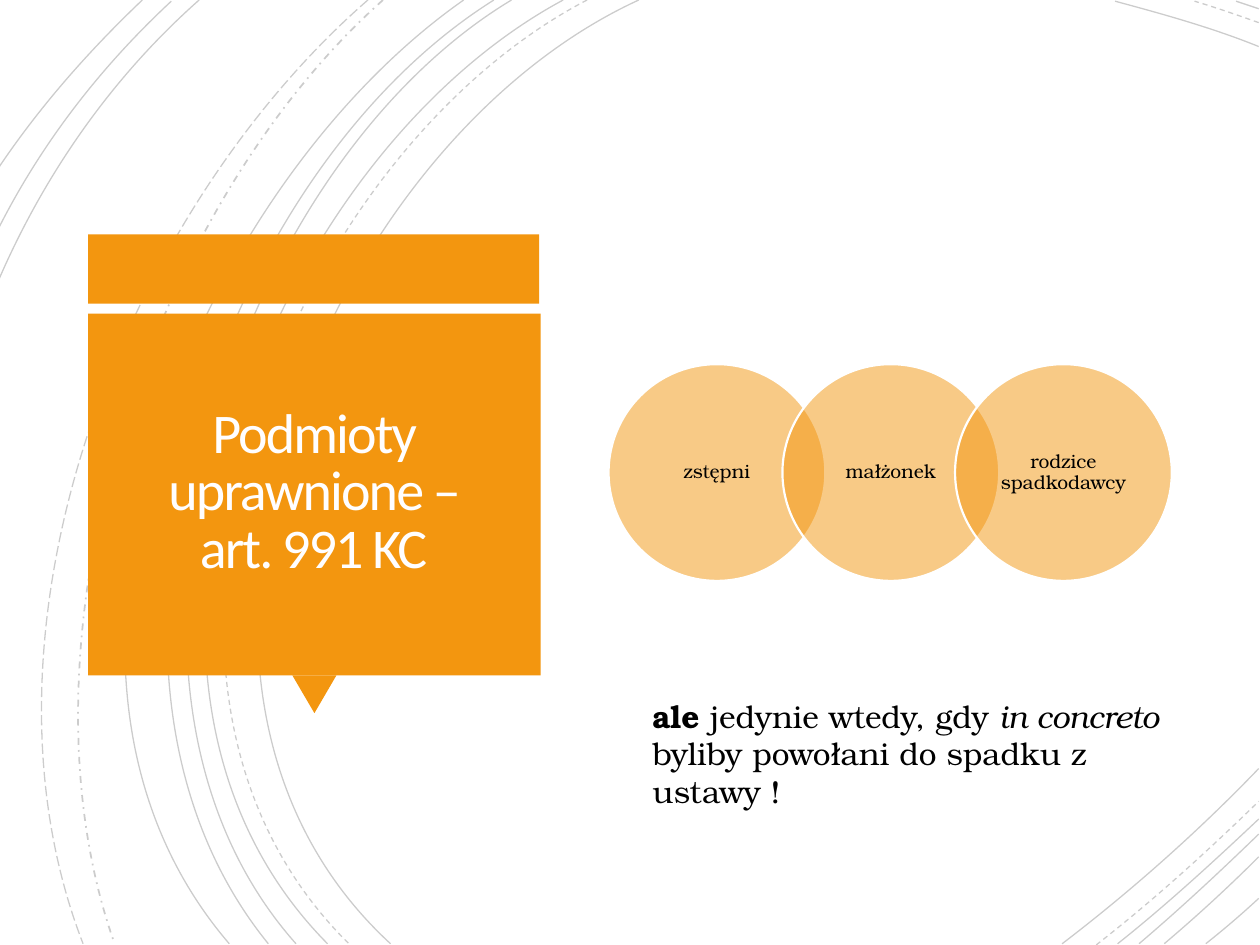
from lxml.etree import SubElement
from pptx import Presentation
from pptx.dml.color import RGBColor
from pptx.enum.dml import MSO_LINE
from pptx.enum.shapes import MSO_SHAPE
from pptx.enum.text import MSO_ANCHOR, PP_ALIGN
from pptx.oxml.ns import qn
from pptx.util import Pt

PX = 9144  # EMU per px, 100 px to the inch
COLORS = {"orange": "F3960F", "white": "FFFFFF", "title": "FFFEFF", "black": "000000"}
SERIF = "TeX Gyre Bonum"


def paint(fill, name, opacity=100):
    fill.solid()
    fill.fore_color.rgb = RGBColor.from_string(COLORS[name])
    if opacity < 100:
        color = fill._xPr.find(qn("a:solidFill")).find(qn("a:srgbClr"))
        SubElement(color, qn("a:alpha"), val=str(opacity * 1000))


def add_label(text, box, margins, spacing, font_name, size, color):
    label = slide.shapes.add_textbox(*[length * PX for length in box])
    text_frame = label.text_frame
    text_frame.word_wrap = True
    text_frame.vertical_anchor = MSO_ANCHOR.MIDDLE
    text_frame.margin_left = text_frame.margin_right = margins[0] * PX
    text_frame.margin_top = text_frame.margin_bottom = margins[1] * PX
    text_frame.text = text
    paragraph = text_frame.paragraphs[0]
    paragraph.alignment = PP_ALIGN.CENTER
    paragraph.line_spacing = spacing
    font = paragraph.runs[0].font
    font.name, font.size = font_name, Pt(size)
    paint(font.fill, color)
    return font


presentation = Presentation()
presentation.slide_width, presentation.slide_height = 1000 * PX, 750 * PX
slide = presentation.slides.add_slide(presentation.slide_layouts[6])

# Background arcs: start, two control points and end
solid, dash = (MSO_LINE.SOLID, 0.75), (MSO_LINE.DASH, 0.75)
dash_dot, long_dash = (MSO_LINE.DASH_DOT, 1), (MSO_LINE.LONG_DASH, 0.75)
arcs = [
    (solid, [(507, 0), (256, 115), (83, 540), (310, 749)]),
    (solid, [(999, 37), (962, 22), (922, 11), (885, 1)]),
    (solid, [(843, 749), (898, 707), (951, 660), (999, 610)]),
    (dash, [(466, 0), (226, 125), (63, 538), (277, 749)]),
    (dash, [(999, 18), (982, 12), (965, 6), (948, 1)]),
    (dash, [(870, 750), (915, 715), (958, 676), (999, 636)]),
    (solid, [(447, 0), (211, 127), (50, 537), (260, 749)]),
    (solid, [(999, 7), (993, 5), (987, 3), (981, 1)]),
    (solid, [(887, 749), (926, 718), (963, 684), (999, 650)]),
    (solid, [(406, 0), (185, 133), (50, 541), (235, 749)]),
    (solid, [(904, 749), (937, 721), (968, 692), (999, 662)]),
    (solid, [(392, 0), (172, 138), (38, 534), (213, 749)]),
    (solid, [(924, 749), (950, 727), (975, 704), (999, 680)]),
    (solid, [(368, 0), (158, 147), (-7, 529), (182, 749)]),
    (solid, [(957, 749), (971, 738), (985, 726), (999, 713)]),
    (dash_dot, [(304, 0), (117, 166), (6, 509), (91, 749)]),
    (long_dash, [(292, 0), (98, 169), (-31, 499), (66, 749)]),
    (solid, [(158, 0), (88, 62), (35, 139), (-1, 222)]),
    (solid, [(136, 1), (79, 54), (33, 114), (-1, 181)]),
    (solid, [(113, 0), (71, 40), (32, 84), (-1, 133)]),
]
for (dash_style, weight), (start, *points) in arcs:
    builder = slide.shapes.build_freeform(*start, scale=PX)
    builder.add_line_segments(points, close=False)
    arc = builder.convert_to_shape()
    # Join the three straight segments into one cubic curve
    outline = next(arc._element.iter(qn("a:path")))
    segments = outline.findall(qn("a:lnTo"))
    curve = SubElement(outline, qn("a:cubicBezTo"))
    for segment in segments:
        curve.append(segment[0])
        outline.remove(segment)
    arc.shadow.inherit = False
    arc.fill.background()
    paint(arc.line.fill, "black", 20)
    arc.line.width = Pt(weight)
    arc.line.dash_style = dash_style

# Title panel: strip, pointer and box
for kind, box, rotation in [
    (MSO_SHAPE.RECTANGLE, (70, 186, 358, 55), 0),
    (MSO_SHAPE.ISOSCELES_TRIANGLE, (232, 536, 35, 30), 180),
    (MSO_SHAPE.RECTANGLE, (70, 249, 359, 287), 0),
]:
    block = slide.shapes.add_shape(kind, *[length * PX for length in box])
    block.rotation = rotation
    block.shadow.inherit = False
    paint(block.fill, "orange")
    block.line.fill.background()

title_font = add_label("Podmioty uprawnione – art. 991 KC", (79, 257, 340, 270),
                       (25, 25), 0.85, "Calibri", 32, "title")
title_font._element.set("spc", "-110")

# Overlapping circles with their labels
for index, name in enumerate(["zstępni", "małżonek", "rodzice spadkodawcy"]):
    left = 483 + round(137.5 * index)
    circle = slide.shapes.add_shape(MSO_SHAPE.OVAL, left * PX, 289 * PX, 172 * PX, 172 * PX)
    circle.shadow.inherit = False
    paint(circle.fill, "orange", 50)
    paint(circle.line.fill, "white")
    circle.line.width = Pt(1.25)
    add_label(name, (left + 25, 314, 122, 122), (9, 2), 0.9, SERIF, 11, "black")

# Condition below the circles
condition = slide.shapes.add_textbox(508 * PX, 548 * PX, 423 * PX, 71 * PX)
condition.text_frame.word_wrap = True
paragraph = condition.text_frame.paragraphs[0]
for text, bold, italic in [
    ("ale", True, False),
    (" jedynie wtedy, gdy ", False, False),
    ("in concreto ", False, True),
    ("byliby powołani do spadku z ustawy !", False, False),
]:
    run = paragraph.add_run()
    run.text = text
    run.font.name, run.font.size = SERIF, Pt(18)
    run.font.bold, run.font.italic = bold, italic
    paint(run.font.fill, "black")

presentation.save("out.pptx")
